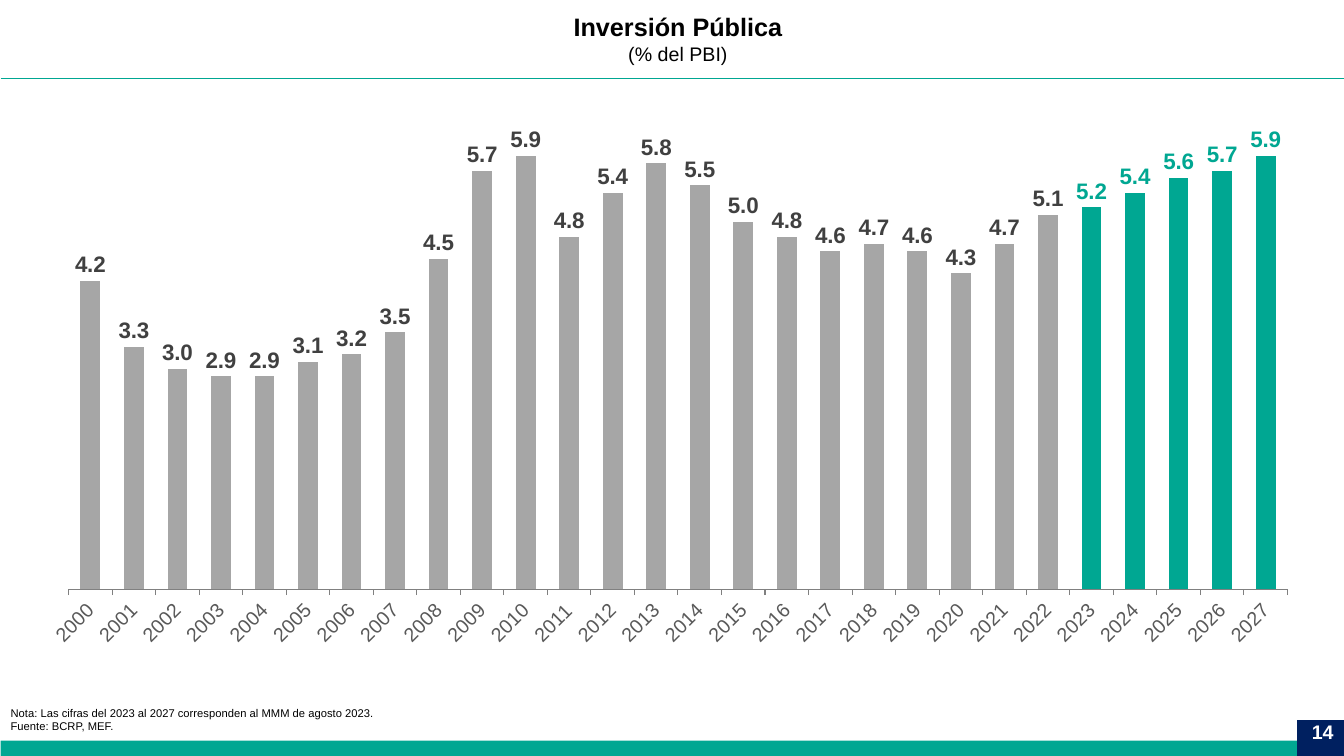
from dataclasses import dataclass

from lxml.etree import SubElement
from pptx import Presentation
from pptx.chart.data import CategoryChartData
from pptx.dml.color import RGBColor
from pptx.enum.chart import XL_CHART_TYPE, XL_LABEL_POSITION, XL_TICK_MARK
from pptx.enum.shapes import MSO_CONNECTOR, MSO_SHAPE
from pptx.enum.text import MSO_ANCHOR, MSO_AUTO_SIZE, PP_ALIGN
from pptx.oxml import parse_xml
from pptx.oxml.ns import nsdecls, qn
from pptx.util import Pt


@dataclass(frozen=True)
class Theme:
    font: str = "Arial"
    teal: str = "00A792"
    navy: str = "002060"
    gray: str = "A6A6A6"
    axis: str = "808080"
    tick_text: str = "595959"
    label_text: str = "404040"
    black: str = "000000"
    white: str = "FFFFFF"
    title: int = 18
    label: int = 16
    body: int = 14
    note: int = 8


FIRST_YEAR, FIRST_FORECAST = 2000, 2023
INVESTMENT = [
    4.2, 3.3, 3.0, 2.9, 2.9, 3.1, 3.2, 3.5, 4.5, 5.7, 5.9, 4.8, 5.4, 5.8,
    5.5, 5.0, 4.8, 4.6, 4.7, 4.6, 4.3, 4.7, 5.1, 5.2, 5.4, 5.6, 5.7, 5.9,
]
# Inner plot area as fractions of the chart frame
PLOT = {"x": 0.03, "y": 0.02, "w": 0.95, "h": 0.86}


def set_all(target, **values):
    for name, value in values.items():
        setattr(target, name, value)


class SlideBuilder:
    def __init__(self, s, theme):
        self.s, self.theme = s, theme

    def style_font(self, font, size, color, bold=False):
        set_all(font, name=self.theme.font, size=Pt(size), bold=bold)
        font.color.rgb = RGBColor.from_string(color)

    def fill(self, target, color):
        target.fill.solid()
        target.fill.fore_color.rgb = RGBColor.from_string(color)

    def put_lines(self, sp, lines, align, wrap=True):
        """Fill a shape with one paragraph per (text, size, colour, bold)."""
        tf = sp.text_frame
        set_all(tf, word_wrap=wrap, auto_size=MSO_AUTO_SIZE.NONE,
                vertical_anchor=MSO_ANCHOR.TOP)
        for i, (text, *style) in enumerate(lines):
            p = tf.add_paragraph() if i else tf.paragraphs[0]
            set_all(p, alignment=align, line_spacing=1.0, space_before=Pt(0))
            r = p.add_run()
            r.text = text
            self.style_font(r.font, *style)

    def title(self, x, y, w, h, lines):
        sp = self.s.shapes.title
        set_all(sp, left=Pt(x), top=Pt(y), width=Pt(w), height=Pt(h))
        self.put_lines(sp, lines, PP_ALIGN.CENTER, wrap=False)

    def text(self, x, y, w, h, lines, align=PP_ALIGN.LEFT):
        sp = self.s.shapes.add_textbox(Pt(x), Pt(y), Pt(w), Pt(h))
        self.put_lines(sp, lines, align)

    def rule(self, x1, x2, y, color):
        line = self.s.shapes.add_connector(
            MSO_CONNECTOR.STRAIGHT, Pt(x1), Pt(y), Pt(x2), Pt(y))
        line.line.width = Pt(0.75)
        line.line.color.rgb = RGBColor.from_string(color)
        SubElement(line._element.spPr, qn("a:effectLst"))

    def block(self, x, y, w, h, color):
        sp = self.s.shapes.add_shape(
            MSO_SHAPE.RECTANGLE, Pt(x), Pt(y), Pt(w), Pt(h))
        sp.shadow.inherit = False
        self.fill(sp, color)
        sp.line.fill.background()

    def column_chart(self, x, y, w, h, values, first_year, first_forecast):
        t = self.theme
        data = CategoryChartData(number_format="0.0")
        data.categories = [str(first_year + i) for i in range(len(values))]
        data.add_series("Inversión Pública", values)
        chart = self.s.shapes.add_chart(
            XL_CHART_TYPE.COLUMN_CLUSTERED, Pt(x), Pt(y), Pt(w), Pt(h), data).chart
        set_all(chart, has_legend=False, has_title=False)
        self.style_font(chart.font, t.body, t.black)
        self.place_plot(chart)

        set_all(chart.value_axis, minimum_scale=0, maximum_scale=6.5,
                has_major_gridlines=False, visible=False)
        axis = chart.category_axis
        set_all(axis, major_tick_mark=XL_TICK_MARK.OUTSIDE, has_major_gridlines=False)
        axis.format.line.width = Pt(0.75)
        axis.format.line.color.rgb = RGBColor.from_string(t.axis)
        self.style_font(axis.tick_labels.font, t.body, t.tick_text)
        axis._element.find(qn("c:txPr")).find(qn("a:bodyPr")).set("rot", "-2700000")

        plot = chart.plots[0]
        set_all(plot, gap_width=120, overlap=-27, vary_by_categories=False)
        series = plot.series[0]
        self.fill(series.format, t.gray)
        labels = series.data_labels
        set_all(labels, show_value=True, number_format="0.0",
                number_format_is_linked=False, position=XL_LABEL_POSITION.OUTSIDE_END)
        self.style_font(labels.font, t.label, t.label_text, True)
        for i in range(first_forecast - first_year, len(values)):
            point = series.points[i]
            self.fill(point.format, t.teal)
            self.style_font(point.data_label.font, t.label, t.teal, True)
            point.data_label.position = XL_LABEL_POSITION.OUTSIDE_END

    def place_plot(self, chart):
        area = chart._chartSpace.chart.plotArea
        for old in area.findall(qn("c:layout")):
            area.remove(old)
        modes = '<c:layoutTarget val="inner"/><c:xMode val="edge"/><c:yMode val="edge"/>'
        sizes = "".join(f'<c:{k} val="{v}"/>' for k, v in PLOT.items())
        area.insert(0, parse_xml(
            f'<c:layout {nsdecls("c")}><c:manualLayout>{modes}{sizes}'
            '</c:manualLayout></c:layout>'))


def main():
    prs = Presentation()
    set_all(prs, slide_width=Pt(960), slide_height=Pt(540))
    t = Theme()
    b = SlideBuilder(prs.slides.add_slide(prs.slide_layouts[5]), t)

    b.rule(0.5, 960, 56, t.teal)
    b.block(0.5, 529, 959.5, 11, t.teal)
    b.block(926.5, 514.5, 33.5, 25.5, t.navy)
    b.title(401.75, 4.5, 165, 46, [
        ("Inversión Pública", t.title, t.black, True),
        ("(% del PBI)", t.body, t.black),
    ])
    b.text(743.75, 511, 216, 29, [("14", t.body, t.white, True)], PP_ALIGN.RIGHT)
    b.column_chart(21.5, 72, 916.5, 396.5, INVESTMENT, FIRST_YEAR, FIRST_FORECAST)
    b.text(0.5, 501, 913, 26.5, [
        ("Nota: Las cifras del 2023 al 2027 corresponden al MMM de agosto 2023.",
         t.note, t.black),
        ("Fuente: BCRP, MEF.", t.note, t.black),
    ])
    prs.save("out.pptx")


if __name__ == "__main__":
    main()
